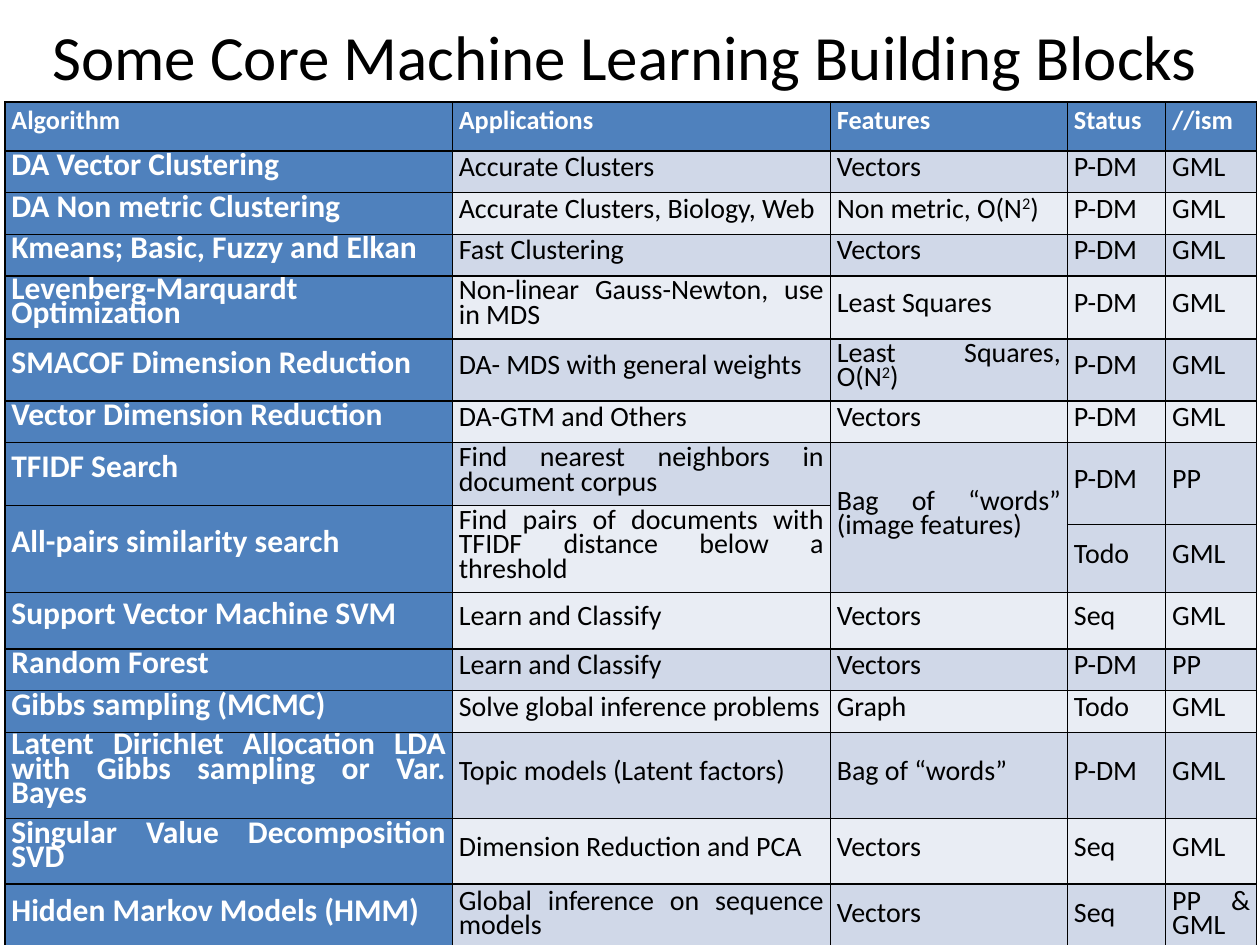
from lxml.etree import SubElement
from pptx import Presentation
from pptx.dml.color import RGBColor
from pptx.enum.text import MSO_ANCHOR, PP_ALIGN
from pptx.oxml.ns import qn
from pptx.util import Cm, Pt

HUES = {"head": "4F81BD", "odd": "D0D8E8", "even": "E9EDF4",
        "ink": "000000", "light": "FFFFFF"}
FACE = "Calibri"

COLS = [9.02, 7.62, 4.78, 1.98, 1.83]
# Height of each row, then its cells; None is covered by a merge
ROWS = [
    (0.91, "Algorithm", "Applications", "Features", "Status", "//ism"),
    (0.84, "DA Vector Clustering", "Accurate Clusters", "Vectors", "P-DM", "GML"),
    (0.84, "DA Non metric Clustering", "Accurate Clusters, Biology, Web",
     "Non metric, O(N²)", "P-DM", "GML"),
    (0.84, "Kmeans; Basic, Fuzzy and Elkan", "Fast Clustering", "Vectors", "P-DM", "GML"),
    (1.27, "Levenberg-Marquardt Optimization", "Non-linear Gauss-Newton, use in MDS",
     "Least Squares", "P-DM", "GML"),
    (0.99, "SMACOF Dimension Reduction", "DA- MDS with general weights",
     "Least Squares, O(N²)", "P-DM", "GML"),
    (0.84, "Vector Dimension Reduction", "DA-GTM and Others", "Vectors", "P-DM", "GML"),
    (1.27, "TFIDF Search", "Find nearest neighbors in document corpus",
     "Bag of “words” (image features)", "P-DM", "PP"),
    (0.38, "All-pairs similarity search",
     "Find pairs of documents with TFIDF distance below a threshold", None, None, None),
    (1.37, None, None, None, "Todo", "GML"),
    (1.14, "Support Vector Machine SVM", "Learn and Classify", "Vectors", "Seq", "GML"),
    (0.84, "Random Forest", "Learn and Classify", "Vectors", "P-DM", "PP"),
    (0.84, "Gibbs sampling (MCMC)", "Solve global inference problems",
     "Graph", "Todo", "GML"),
    (1.65, "Latent Dirichlet Allocation LDA with Gibbs sampling or Var. Bayes",
     "Topic models (Latent factors)", "Bag of “words”", "P-DM", "GML"),
    (1.32, "Singular Value Decomposition SVD", "Dimension Reduction and PCA",
     "Vectors", "Seq", "GML"),
    (1.35, "Hidden Markov Models (HMM)", "Global inference on sequence models",
     "Vectors", "Seq", "PP & GML"),
]
# First row, last row and column of each merge
SPANS = [(7, 9, 2), (7, 8, 3), (7, 8, 4), (8, 9, 0), (8, 9, 1)]


def rgb(name):
    return RGBColor.from_string(HUES[name])


def style(run, size, hue, bold=False):
    font = run.font
    font.name, font.size, font.bold = FACE, Pt(size), bold
    font.color.rgb = rgb(hue)


def add_title(slide, left, top, width, height):
    frame = slide.shapes.add_textbox(Cm(left), Cm(top), Cm(width), Cm(height)).text_frame
    frame.word_wrap = True
    frame.vertical_anchor = MSO_ANCHOR.MIDDLE
    frame.text = "Some Core Machine Learning Building Blocks"
    para = frame.paragraphs[0]
    para.alignment = PP_ALIGN.CENTER
    style(para.runs[0], 36, "ink")


def add_edges(cell):
    props = cell._tc.get_or_add_tcPr()
    for side in ("lnL", "lnR", "lnT", "lnB"):
        line = SubElement(props, qn(f"a:{side}"), w=str(Pt(1)))
        fill = SubElement(line, qn("a:solidFill"))
        SubElement(fill, qn("a:srgbClr"), val=HUES["ink"])


def write(para, text):
    """Set the text, with a raised 2 wherever ² stands."""
    base, mark, rest = text.partition("²")
    para.text = base
    if mark:
        high, tail = para.add_run(), para.add_run()
        high.text, tail.text = "2", rest
        high._r.get_or_add_rPr().set("baseline", "30000")


def fill_cell(cell, row, col, text):
    add_edges(cell)
    top = row == 0
    dark = top or col == 0
    cell.fill.solid()
    cell.fill.fore_color.rgb = rgb("head" if dark else "odd" if row % 2 else "even")
    cell.vertical_anchor = MSO_ANCHOR.MIDDLE
    cell.margin_left = cell.margin_right = Cm(0.13)
    cell.margin_top = cell.margin_bottom = Cm(0.28 if top else 0.13)
    if text is None:
        return
    para = cell.text_frame.paragraphs[0]
    write(para, text)
    para.alignment = PP_ALIGN.LEFT if top else PP_ALIGN.JUSTIFY
    para.line_spacing = Pt(12 if top else 14)
    for run in para.runs:
        style(run, 15 if top else 18 if dark else 16, "light" if dark else "ink", dark)


def add_grid(slide, left, top):
    high = sum(row[0] for row in ROWS)
    table = slide.shapes.add_table(len(ROWS), len(COLS), Cm(left), Cm(top),
                                   Cm(sum(COLS)), Cm(high)).table
    table.horz_banding = False
    for col, width in zip(table.columns, COLS):
        col.width = Cm(width)
    for r, (height, *texts) in enumerate(ROWS):
        table.rows[r].height = Cm(height)
        for c, text in enumerate(texts):
            fill_cell(table.cell(r, c), r, c, text)
    for first, last, col in SPANS:
        table.cell(first, col).merge(table.cell(last, col))


def main():
    deck = Presentation()
    deck.slide_width, deck.slide_height = Cm(25.4), Cm(19.05)
    slide = deck.slides.add_slide(deck.slide_layouts[6])
    add_title(slide, 0, 0.1, 25.2, 2.03)
    add_grid(slide, 0.1, 2.06)
    deck.save("out.pptx")


if __name__ == "__main__":
    main()
